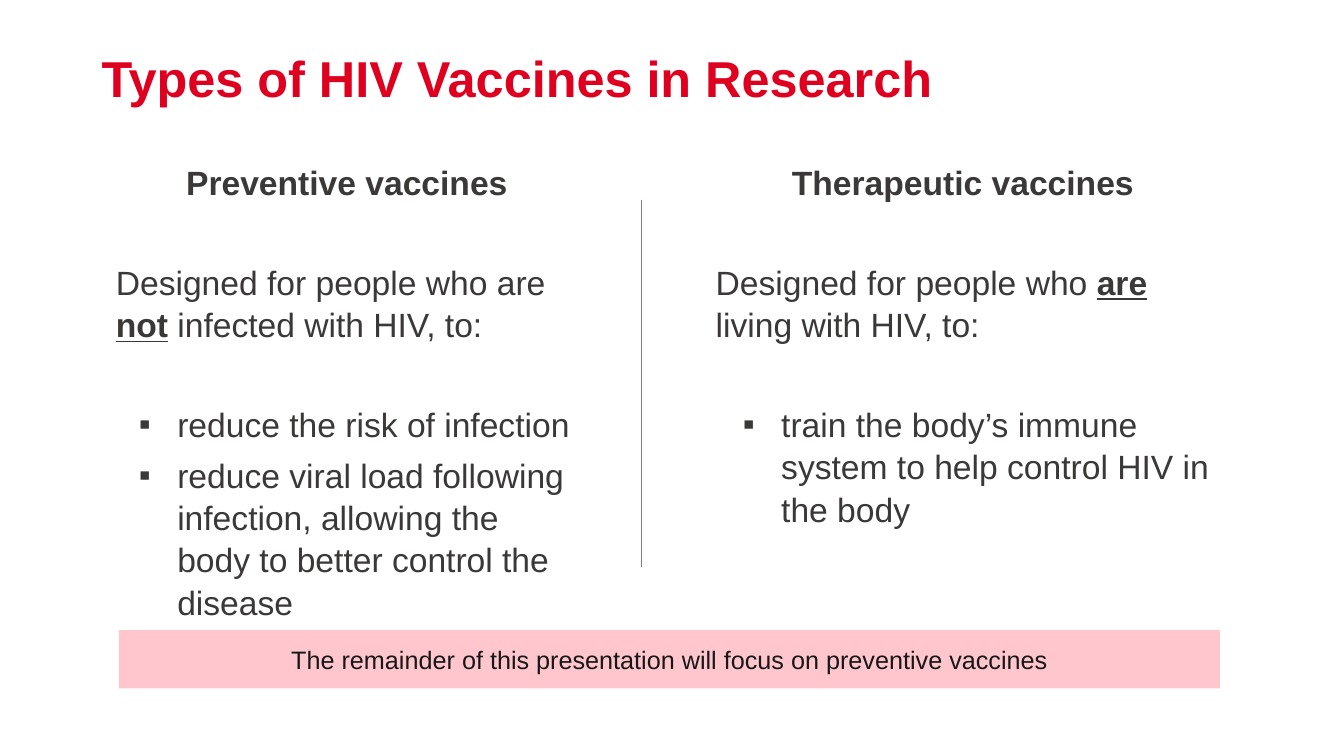
from lxml.etree import SubElement
from pptx import Presentation
from pptx.dml.color import RGBColor
from pptx.enum.shapes import MSO_CONNECTOR, MSO_SHAPE
from pptx.enum.text import MSO_ANCHOR, PP_ALIGN
from pptx.oxml.ns import qn
from pptx.util import Inches, Pt

TITLE = "Types of HIV Vaccines in Research"
COLUMNS = [
    {
        "box": (1.05, 1.54, 4.78, 4.09),
        "heading": "Preventive vaccines",
        "intro": ("Designed for people who are ", "not", " infected with HIV, to:"),
        "goals": [
            "reduce the risk of infection",
            "reduce viral load following infection, allowing the body to better control the disease",
        ],
        "indent": 0.61,
    },
    {
        "box": (7, 1.54, 5.1, 4.96),
        "heading": "Therapeutic vaccines",
        "intro": ("Designed for people who ", "are", " living with HIV, to:"),
        "goals": ["train the body’s immune system to help control HIV in the body"],
        "indent": 0.65,
    },
]
FOCUS_NOTE = "The remainder of this presentation will focus on preventive vaccines"

TITLE_BOX = (0.91, 0.4, 11.9, 0.82)
DIVIDER = (6.36, 1.98, 6.36, 5.63)
NOTE_BOX = (1.18, 6.25, 10.92, 0.58)
HANGING = 0.38

THEME = {
    "font": "Arial",
    "title": {"size": 36, "color": "DF0020", "bold": True},
    "heading": {"size": 24, "color": "3B3838", "bold": True},
    "body": {"size": 24, "color": "3B3838", "bold": False},
    "stress": {"size": 24, "color": "3B3838", "bold": True, "underline": True},
    "note": {"size": 18, "color": "181717", "bold": False},
    "note_fill": "FFC6CE",
    "divider": "808080",
}
SECTION = {"line_spacing": 1.05, "space_after": Pt(41)}
GOAL = {"line_spacing": 1.05, "space_after": Pt(6), "level": 1}


def set_attributes(target, values):
    for name, value in values.items():
        setattr(target, name, value)


def inches(values):
    return [Inches(value) for value in values]


def add_run(paragraph, text, style):
    run = paragraph.add_run()
    run.text = text
    values = dict(THEME[style])
    run.font.color.rgb = RGBColor.from_string(values.pop("color"))
    values.update(size=Pt(values["size"]), name=THEME["font"])
    set_attributes(run.font, values)


def add_text_box(slide, box, anchor):
    frame = slide.shapes.add_textbox(*inches(box)).text_frame
    set_attributes(frame, {"word_wrap": True, "vertical_anchor": anchor})
    return frame


def add_bullet(paragraph, indent):
    properties = paragraph._p.get_or_add_pPr()
    properties.set("marL", str(Inches(indent)))
    properties.set("indent", str(-Inches(HANGING)))
    SubElement(properties, qn("a:buFont"), typeface=THEME["font"])
    SubElement(properties, qn("a:buChar"), char="▪")


def add_column(slide, column):
    frame = add_text_box(slide, column["box"], MSO_ANCHOR.TOP)
    heading = frame.paragraphs[0]
    set_attributes(heading, {**SECTION, "alignment": PP_ALIGN.CENTER})
    add_run(heading, column["heading"], "heading")

    intro = frame.add_paragraph()
    set_attributes(intro, SECTION)
    for text, style in zip(column["intro"], ("body", "stress", "body")):
        add_run(intro, text, style)

    for text in column["goals"]:
        goal = frame.add_paragraph()
        set_attributes(goal, GOAL)
        add_bullet(goal, column["indent"])
        add_run(goal, text, "body")


def add_divider(slide):
    divider = slide.shapes.add_connector(MSO_CONNECTOR.STRAIGHT, *inches(DIVIDER))
    divider.line.color.rgb = RGBColor.from_string(THEME["divider"])
    divider.line.width = Pt(0.5)
    SubElement(divider._element.spPr, qn("a:effectLst"))


def add_note(slide):
    shape = slide.shapes.add_shape(MSO_SHAPE.RECTANGLE, *inches(NOTE_BOX))
    shape.shadow.inherit = False
    shape.fill.solid()
    shape.fill.fore_color.rgb = RGBColor.from_string(THEME["note_fill"])
    shape.line.fill.background()
    set_attributes(shape.text_frame, {"word_wrap": True, "vertical_anchor": MSO_ANCHOR.MIDDLE})
    paragraph = shape.text_frame.paragraphs[0]
    paragraph.alignment = PP_ALIGN.CENTER
    add_run(paragraph, FOCUS_NOTE, "note")


def main():
    presentation = Presentation()
    set_attributes(presentation, {"slide_width": Inches(13.33), "slide_height": Inches(7.5)})
    slide = presentation.slides.add_slide(presentation.slide_layouts[6])
    title = add_text_box(slide, TITLE_BOX, MSO_ANCHOR.MIDDLE).paragraphs[0]
    title.line_spacing = 0.9
    add_run(title, TITLE, "title")
    for column in COLUMNS:
        add_column(slide, column)
    add_divider(slide)
    add_note(slide)
    presentation.save("out.pptx")


if __name__ == "__main__":
    main()
